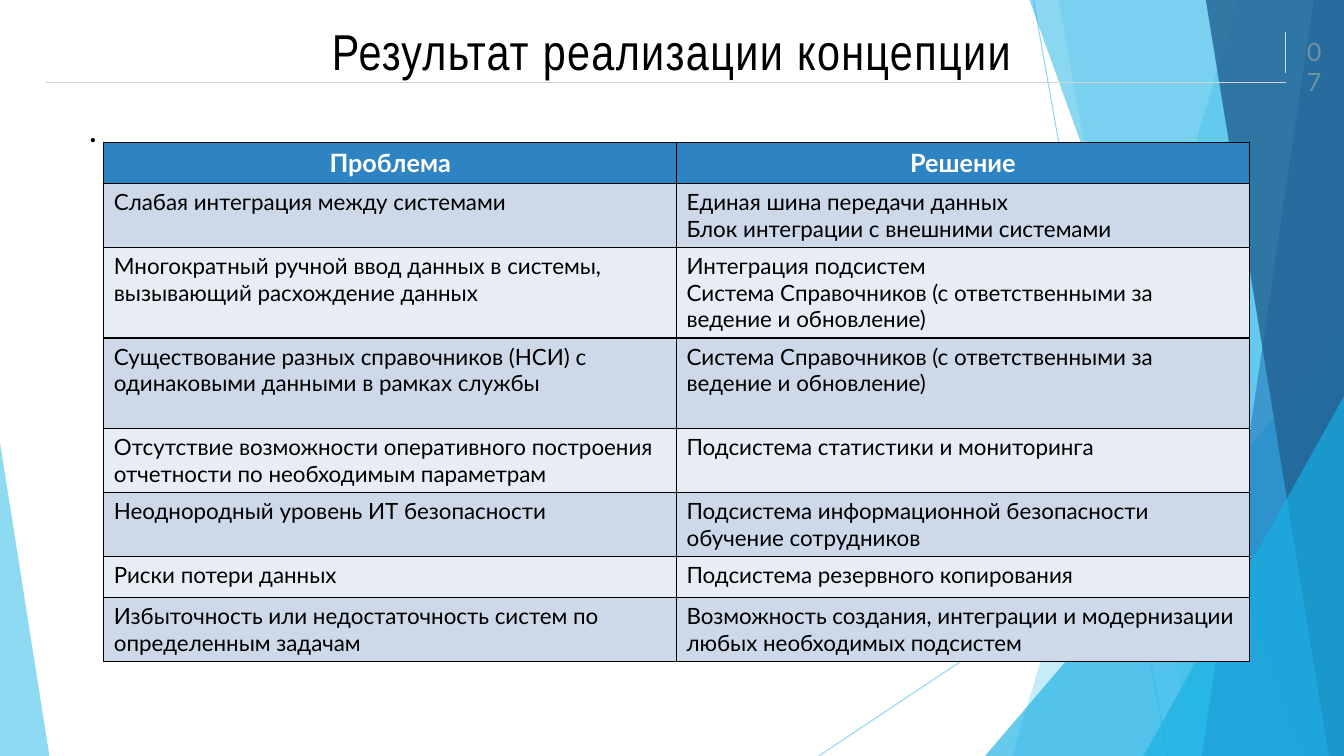
from lxml.etree import SubElement
from pptx import Presentation
from pptx.dml.color import RGBColor
from pptx.enum.shapes import MSO_CONNECTOR, MSO_SHAPE
from pptx.enum.text import MSO_ANCHOR, PP_ALIGN
from pptx.oxml.ns import qn
from pptx.util import Inches, Pt

WIDE, HIGH = 13.33, 7.5
SKY, CYAN, BLUE, NAVY = "5FCBEF", "17B0E4", "2E83C3", "226292"
BLACK, WHITE = "000000", "FFFFFF"
BANDS = ["CDD9E9", "E8EDF5"]

# Row height, problem, solution lines
ROWS = [
    (0.63, "Слабая интеграция между системами",
     "Единая шина передачи данных\nБлок интеграции с внешними системами"),
    (0.9, "Многократный ручной ввод данных в системы, вызывающий расхождение данных",
     "Интеграция подсистем\nСистема Справочников (с ответственными за ведение и обновление)"),
    (0.9, "Существование разных справочников (НСИ) с одинаковыми данными в рамках службы",
     "Система Справочников (с ответственными за ведение и обновление)"),
    (0.63, "Отсутствие возможности оперативного построения отчетности по необходимым параметрам",
     "Подсистема статистики и мониторинга"),
    (0.63, "Неоднородный уровень ИТ безопасности",
     "Подсистема информационной безопасности\nобучение сотрудников"),
    (0.41, "Риски потери данных", "Подсистема резервного копирования"),
    (0.63, "Избыточность или недостаточность систем по определенным задачам",
     "Возможность создания, интеграции и модернизации любых необходимых подсистем"),
]


def tint(fmt, color, alpha=100):
    """Set a solid colour on a fill, with opacity in percent."""
    fmt.solid()
    fmt.fore_color.rgb = RGBColor.from_string(color)
    if alpha < 100:
        node = fmt._xPr.find(qn("a:solidFill"))[0]
        SubElement(node, qn("a:alpha"), val=str(alpha * 1000))


def write(frame, text, size=16, color=BLACK, font="Lato", bold=False,
          align=PP_ALIGN.LEFT, lead=None, track=None):
    frame.word_wrap = True
    frame.text = text
    for para in frame.paragraphs:
        para.alignment = align
        if lead:
            para.line_spacing = lead
        for run in para.runs:
            run.font.size, run.font.name, run.font.bold = Pt(size), font, bold
            run.font.color.rgb = RGBColor.from_string(color)
            if track:
                run._r.get_or_add_rPr().set("spc", str(track * 100))


def label(slide, box, text, anchor=MSO_ANCHOR.TOP, **style):
    frame = slide.shapes.add_textbox(*map(Inches, box)).text_frame
    frame.vertical_anchor = anchor
    write(frame, text, **style)


def rule(slide, start, end, color, width=1, alpha=100):
    line = slide.shapes.add_connector(
        MSO_CONNECTOR.STRAIGHT, *map(Inches, start + end))
    tint(line.line.fill, color, alpha)
    line.line.width = Pt(width)
    SubElement(line._element.spPr, qn("a:effectLst"))


def paint(shape, color, alpha):
    shape.shadow.inherit = False
    tint(shape.fill, color, alpha)
    shape.line.fill.background()


def shard(slide, box, top, foot, color, alpha):
    """Fill from a slanted left edge to the right side of the box."""
    x, y, w, h = box
    pts = [(x + top, y), (x + w, y), (x + w, y + h), (x + foot, y + h)]
    pts = [(Inches(a), Inches(b)) for a, b in pts]
    pen = slide.shapes.build_freeform(*pts[0], scale=1.0)
    pen.add_line_segments(pts[1:], close=True)
    paint(pen.convert_to_shape(), color, alpha)


def wedge(slide, box, peak, color, alpha):
    shape = slide.shapes.add_shape(
        MSO_SHAPE.ISOSCELES_TRIANGLE, *map(Inches, box))
    shape.adjustments[0] = peak
    paint(shape, color, alpha)


def decor(slide, box):
    """Draw the translucent facets along the slide edges."""
    x, y, w, h = box
    right, base = x + w, y + h

    def facet(wide, top, foot, color, alpha):
        shard(slide, (right - wide, y, wide, h), top, foot, color, alpha)

    def corner(wide, tall, color, alpha):
        wedge(slide, (right - wide, base - tall, wide, tall), 1, color, alpha)

    rule(slide, (x + 10.25, y), (x + 11.58, base), SKY, 0.75, 70)
    rule(slide, (right, y + 4.03), (x + 8.12, base), SKY, 0.75, 70)
    facet(3.29, 2.24, 0, SKY, 36)
    facet(2.83, 0, 1.33, SKY, 20)
    corner(3.56, 4.17, CYAN, 66)
    facet(3.12, 0, 2.7, CYAN, 50)
    facet(1.41, 1.11, 0, BLUE, 70)
    facet(1.37, 0, 1.22, NAVY, 80)
    corner(1.99, 3.57, CYAN, 66)
    wedge(slide, (x, base - 3.11, 0.49, 3.11), 0, SKY, 70)


def header(slide, box):
    x, y, w, h = box
    edge = x + 12.75
    label(slide, box, "Результат реализации концепции", MSO_ANCHOR.MIDDLE,
          size=36, font="Arial Narrow", align=PP_ALIGN.CENTER,
          lead=0.9, track=1)
    label(slide, (edge + 0.05, y + 0.31, 0.47, 0.4), "07", size=18,
          color="6E91A0", align=PP_ALIGN.CENTER)
    rule(slide, (edge, y + 0.32), (edge, y + 0.72), "CFDADF")
    label(slide, (x + 0.79, y + 1.09, 11.96, 1.35), ".", size=20, bold=True)
    rule(slide, (x + 0.46, y + 0.82), (edge, y + 0.82), "D3D3D3")


def border(cell):
    props = cell._tc.get_or_add_tcPr()
    for i, side in enumerate(("lnL", "lnR", "lnT", "lnB")):
        line = SubElement(props, qn("a:" + side), w=str(Pt(1)))
        fill = SubElement(line, qn("a:solidFill"))
        SubElement(fill, qn("a:srgbClr"), val=BLACK)
        props.insert(i, line)


def grid(slide, box):
    rows = [(0.41, "Проблема", "Решение")] + ROWS
    table = slide.shapes.add_table(len(rows), 2, *map(Inches, box)).table
    for col in table.columns:
        col.width = Inches(box[2] / 2)
    for r, (tall, *texts) in enumerate(rows):
        table.rows[r].height = Inches(tall)
        style = {} if r else dict(size=18, color=WHITE, bold=True,
                                  align=PP_ALIGN.CENTER)
        for c, text in enumerate(texts):
            cell = table.cell(r, c)
            write(cell.text_frame, text, **style)
            tint(cell.fill, BANDS[(r - 1) % 2] if r else BLUE)
            border(cell)


def main():
    deck = Presentation()
    deck.slide_width, deck.slide_height = Inches(WIDE), Inches(HIGH)
    slide = deck.slides.add_slide(deck.slide_layouts[6])
    decor(slide, (0, 0, WIDE, HIGH))
    header(slide, (0, 0, WIDE, 1.07))
    grid(slide, (1.03, 1.41, 11.36, 5.14))
    deck.save("out.pptx")


if __name__ == "__main__":
    main()
